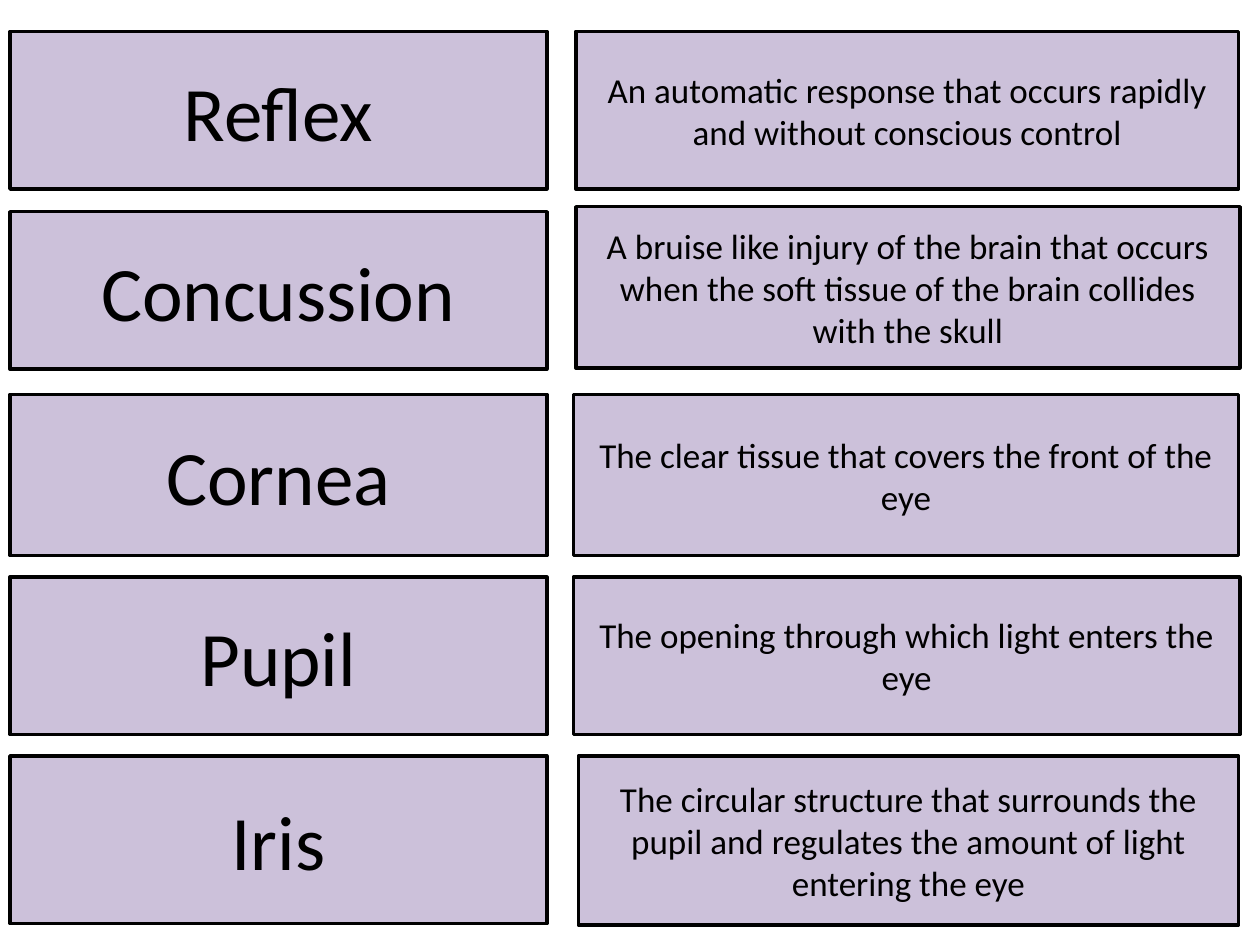
import dataclasses

import pptx
import pptx.dml.color
import pptx.enum.shapes
import pptx.enum.text
import pptx.util

Inches = pptx.util.Inches


@dataclasses.dataclass(frozen=True)
class Theme:
    font: str = "Calibri"
    fill: str = "CCC1DA"
    ink: str = "000000"
    line_width: float = 2
    term_size: int = 44
    definition_size: int = 20


@dataclasses.dataclass(frozen=True)
class Card:
    text: str
    left: float
    top: float
    width: float
    height: float


THEME = Theme()
TERM_LEFT = 0.08
TERM_WIDTH = 4.26

GLOSSARY = [
    (("Reflex", 0.25, 1.25),
     Card("An automatic response that occurs rapidly and without conscious control",
          4.57, 0.25, 5.26, 1.25)),
    (("Concussion", 1.68, 1.25),
     Card("A bruise like injury of the brain that occurs when the soft tissue "
          "of the brain collides with the skull", 4.57, 1.64, 5.27, 1.28)),
    (("Cornea", 3.13, 1.28),
     Card("The clear tissue that covers the front of the eye", 4.55, 3.13, 5.28, 1.28)),
    (("Pupil", 4.58, 1.25),
     Card("The opening through which light enters the eye", 4.55, 4.58, 5.29, 1.25)),
    (("Iris", 6, 1.33),
     Card("The circular structure that surrounds the pupil and regulates "
          "the amount of light entering the eye", 4.59, 6, 5.24, 1.34)),
]


def color(value):
    return pptx.dml.color.RGBColor.from_string(value)


def add_card(slide, card, size):
    shape = slide.shapes.add_shape(
        pptx.enum.shapes.MSO_SHAPE.FLOWCHART_PROCESS,
        Inches(card.left), Inches(card.top), Inches(card.width), Inches(card.height))
    shape.shadow.inherit = False
    shape.fill.solid()
    shape.fill.fore_color.rgb = color(THEME.fill)
    shape.line.color.rgb = color(THEME.ink)
    shape.line.width = pptx.util.Pt(THEME.line_width)

    text_frame = shape.text_frame
    text_frame.word_wrap = True
    text_frame.vertical_anchor = pptx.enum.text.MSO_ANCHOR.MIDDLE
    text_frame.text = card.text
    paragraph = text_frame.paragraphs[0]
    paragraph.alignment = pptx.enum.text.PP_ALIGN.CENTER
    font = paragraph.runs[0].font
    font.name = THEME.font
    font.size = pptx.util.Pt(size)
    font.color.rgb = color(THEME.ink)


def main():
    presentation = pptx.Presentation()
    presentation.slide_width = Inches(10)
    presentation.slide_height = Inches(7.5)
    slide = presentation.slides.add_slide(presentation.slide_layouts[6])
    for (term, top, height), definition in GLOSSARY:
        add_card(slide, Card(term, TERM_LEFT, top, TERM_WIDTH, height), THEME.term_size)
        add_card(slide, definition, THEME.definition_size)
    presentation.save("out.pptx")


if __name__ == "__main__":
    main()
